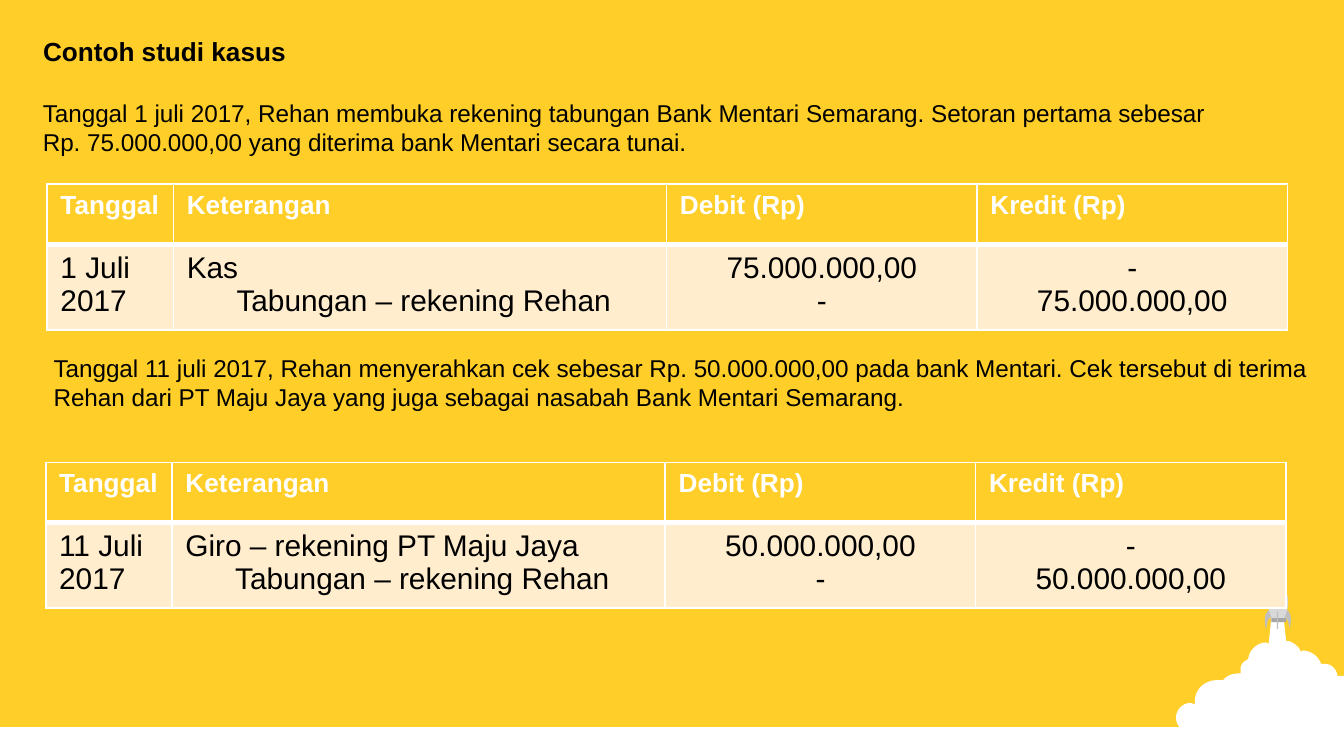
from lxml import etree
from pptx import Presentation
from pptx.dml.color import RGBColor
from pptx.enum.shapes import MSO_SHAPE
from pptx.enum.text import MSO_ANCHOR, PP_ALIGN
from pptx.oxml.ns import qn
from pptx.util import Inches, Pt

RECT = MSO_SHAPE.RECTANGLE
TOP = MSO_ANCHOR.TOP
LEFT, CENTER = PP_ALIGN.LEFT, PP_ALIGN.CENTER

WIDE = 10
HIGH = WIDE * 9 / 16
FONT = "Arial"
GOLD, CREAM, WHITE, BLACK = "FFCE29", "FFEDCD", "FFFFFF", "000000"
PALE, GREY, DARK = "D9D9D9", "BFBFBF", "A6A6A6"

TITLE = "Contoh studi kasus"
TEXTS = [  # left, top, height, lines
    (0.22, 0.68, 0.57, [
        "Tanggal 1 juli 2017, Rehan membuka rekening tabungan Bank Mentari Semarang. "
        "Setoran pertama sebesar",
        "Rp. 75.000.000,00 yang diterima bank Mentari secara tunai."]),
    (0.3, 2.58, 0.76, [
        "Tanggal 11 juli 2017, Rehan menyerahkan cek sebesar Rp. 50.000.000,00 pada "
        "bank Mentari. Cek tersebut di terima Rehan dari PT Maju Jaya yang juga "
        "sebagai nasabah Bank Mentari Semarang."]),
]
HEADS = ["Tanggal", "Keterangan", "Debit (Rp)", "Kredit (Rp)"]
COLS = [0.94, 3.67, 2.31, 2.31]
ROWS = [0.45, 0.63]
ENTRIES = [  # left, top, date, debit account, credit account, amount
    (0.35, 1.37, "1 Juli 2017", "Kas", "Tabungan – rekening Rehan", "75.000.000,00"),
    (0.34, 3.44, "11 Juli 2017", "Giro – rekening PT Maju Jaya",
     "Tabungan – rekening Rehan", "50.000.000,00"),
]

# Outlines: two numbers are a corner, six are a curve.
CLOUD = [
    (9.46, 4.59), (9.55, 4.59), (9.57, 4.77), (9.59, 4.77),
    (9.62, 4.78, 9.65, 4.8, 9.67, 4.83), (9.68, 4.85), (9.69, 4.84),
    (9.75, 4.84, 9.81, 4.88, 9.83, 4.94), (9.86, 4.94),
    (9.9, 4.94, 9.94, 4.97, 9.95, 5.02), (9.95, 5.03), (10, 5.03), (10, 5.6),
    (9.98, 5.6), (9.94, 5.6, 9.9, 5.59, 9.87, 5.57), (9.86, 5.56),
    (9.83, 5.58, 9.81, 5.59, 9.78, 5.59), (9.75, 5.59, 9.73, 5.57, 9.71, 5.55),
    (9.69, 5.54), (9.67, 5.58, 9.64, 5.59, 9.6, 5.59),
    (9.57, 5.59, 9.54, 5.58, 9.52, 5.56), (9.51, 5.55),
    (9.45, 5.59, 9.4, 5.61, 9.34, 5.61), (9.23, 5.61, 9.17, 5.56, 9.13, 5.51),
    (9.11, 5.53, 9.07, 5.54, 9.04, 5.53), (9, 5.52, 8.94, 5.5, 8.93, 5.45),
    (8.92, 5.44), (8.91, 5.45, 8.89, 5.45, 8.86, 5.45),
    (8.8, 5.45, 8.75, 5.4, 8.75, 5.34), (8.75, 5.28, 8.8, 5.23, 8.86, 5.23),
    (8.89, 5.24), (8.89, 5.22), (8.89, 5.13, 8.96, 5.06, 9.06, 5.06),
    (9.1, 5.06), (9.11, 5.05), (9.14, 5.02, 9.18, 5.01, 9.23, 5.01),
    (9.23, 4.98), (9.23, 4.95, 9.25, 4.92, 9.28, 4.91), (9.29, 4.89),
    (9.3, 4.83, 9.36, 4.78, 9.42, 4.78), (9.44, 4.79),
]
BODY = [(9.46, 4.62), (9.44, 4.53, 9.4, 4.4, 9.51, 4.31),
        (9.62, 4.41, 9.58, 4.54, 9.56, 4.62)]
FINS = [
    [(9.44, 4.54), (9.46, 4.59), (9.42, 4.61, 9.43, 4.66, 9.42, 4.68),
     (9.41, 4.65, 9.4, 4.57, 9.44, 4.54)],
    [(9.58, 4.54), (9.56, 4.59), (9.59, 4.61, 9.59, 4.66, 9.6, 4.68),
     (9.6, 4.65, 9.62, 4.57, 9.58, 4.54)],
]


def color(code):
    return RGBColor.from_string(code)


def paint(shape, code):
    shape.shadow.inherit = False
    shape.fill.solid()
    shape.fill.fore_color.rgb = color(code)
    shape.line.fill.background()


def block(shapes, box, code):
    paint(shapes.add_shape(RECT, *map(Inches, box)), code)


def trace(steps, parts=8):
    """Turn corners and cubic curves into a list of points."""
    points = []
    for step in steps:
        if len(step) == 2:
            points.append(step)
            continue
        start, ctrl = points[-1], (step[:2], step[2:4], step[4:])
        for i in range(1, parts + 1):
            t = i / parts
            u = 1 - t
            mix = (u ** 3, 3 * u * u * t, 3 * u * t * t, t ** 3)
            points.append(tuple(sum(m * p[k] for m, p in zip(mix, (start, *ctrl)))
                                for k in (0, 1)))
    return points


def outline(shapes, steps, code):
    first, *rest = [(Inches(x), Inches(y)) for x, y in trace(steps)]
    path = shapes.build_freeform(*first)
    path.add_line_segments(rest, close=True)
    paint(path.convert_to_shape(), code)


def write(frame, lines, size, code=BLACK, bold=False, align=LEFT):
    for i, line in enumerate(lines):
        para = frame.paragraphs[0] if i == 0 else frame.add_paragraph()
        para.alignment = align
        run = para.add_run()
        run.text = line
        font = run.font
        font.name, font.size, font.bold = FONT, Pt(size), bold
        font.color.rgb = color(code)


def place(shape, box):
    shape.left, shape.top, shape.width, shape.height = map(Inches, box)
    shape.text_frame.word_wrap = True
    shape.text_frame.vertical_anchor = TOP


def edge(cell, widths):
    props = cell._tc.get_or_add_tcPr()
    for side, width in zip("LRTB", widths):
        line = etree.SubElement(props, qn(f"a:ln{side}"), w=str(Pt(width)))
        fill = etree.SubElement(line, qn("a:solidFill"))
        etree.SubElement(fill, qn("a:srgbClr"), val=WHITE)


def journal(shapes, left, top, date, debit, credit, total):
    box = map(Inches, (left, top, sum(COLS), sum(ROWS)))
    table = shapes.add_table(len(ROWS), len(COLS), *box).table
    for col, width in zip(table.columns, COLS):
        col.width = Inches(width)
    for row, height in zip(table.rows, ROWS):
        row.height = Inches(height)
    entry = [[date], [debit, credit], [total, "-"], ["-", total]]
    for i, (head, lines) in enumerate(zip(HEADS, entry)):
        upper, lower = table.cell(0, i), table.cell(1, i)
        edge(upper, (1, 1, 1, 3))
        edge(lower, (1, 1, 3, 1))
        for cell, code in ((upper, GOLD), (lower, CREAM)):
            cell.fill.solid()
            cell.fill.fore_color.rgb = color(code)
        write(upper.text_frame, [head], 14, WHITE, True)
        write(lower.text_frame, lines, 16, align=CENTER if i > 1 else LEFT)
    indent = table.cell(1, 1).text_frame.paragraphs[1]._p.get_or_add_pPr()
    indent.set("marL", str(Inches(0.37)))


def main():
    deck = Presentation()
    deck.slide_width, deck.slide_height = Inches(WIDE), Inches(HIGH)
    slide = deck.slides.add_slide(deck.slide_layouts[5])
    shapes = slide.shapes
    slide.background.fill.solid()
    slide.background.fill.fore_color.rgb = color(GOLD)

    block(shapes, (0, 5.41, WIDE, HIGH - 5.41), WHITE)
    outline(shapes, CLOUD, WHITE)
    outline(shapes, BODY, PALE)
    block(shapes, (9.46, 4.6, 0.11, 0.03), DARK)
    block(shapes, (9.5, 4.55, 0.01, 0.13), GREY)
    for fin in FINS:
        outline(shapes, fin, GREY)

    place(shapes.title, (0.22, 0.21, 9.65, 0.33))
    write(shapes.title.text_frame, [TITLE], 14, bold=True)
    for left, top, height, lines in TEXTS:
        box = (left, top, 9.65, height)
        note = shapes.add_textbox(*map(Inches, box))
        place(note, box)
        write(note.text_frame, lines, 13)
    for entry in ENTRIES:
        journal(shapes, *entry)
    deck.save("out.pptx")


if __name__ == "__main__":
    main()
